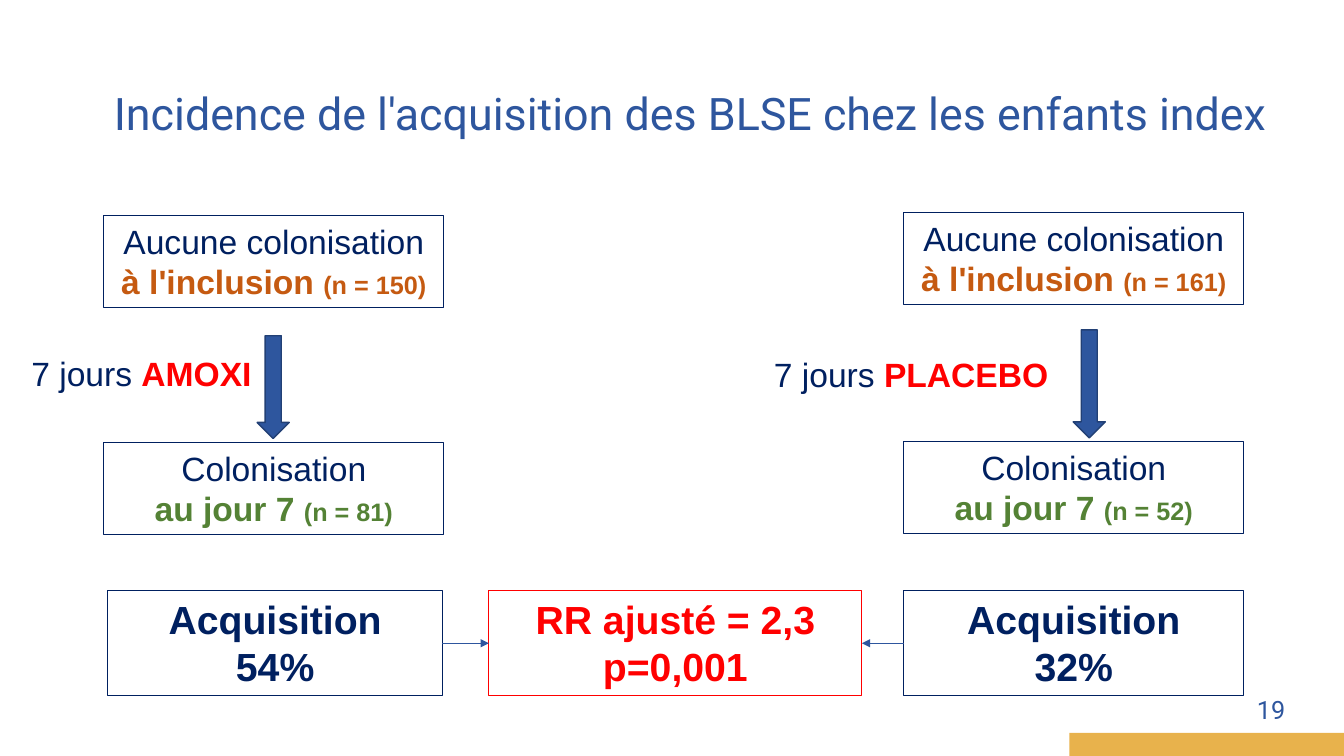
from lxml import etree
from pptx import Presentation
from pptx.dml.color import RGBColor
from pptx.enum.shapes import MSO_CONNECTOR, MSO_SHAPE
from pptx.enum.text import MSO_ANCHOR, MSO_AUTO_SIZE, PP_ALIGN
from pptx.oxml.ns import qn
from pptx.util import Cm, Pt

RECTANGLE, ARROW = MSO_SHAPE.RECTANGLE, MSO_SHAPE.RIGHT_ARROW
STRAIGHT = MSO_CONNECTOR.STRAIGHT
TOP, MIDDLE = MSO_ANCHOR.TOP, MSO_ANCHOR.MIDDLE
LEFT, CENTER, RIGHT = PP_ALIGN.LEFT, PP_ALIGN.CENTER, PP_ALIGN.RIGHT
GROW = MSO_AUTO_SIZE.SHAPE_TO_FIT_TEXT

COLORS = {
    "navy": "002060", "blue": "2E569E", "edge": "224075", "red": "FF0000",
    "orange": "C55A11", "green": "548235", "gold": "E8B24C",
}


def color(name):
    return RGBColor.from_string(COLORS[name])


def span(text, size=24, ink="navy", bold=False, font="Arial"):
    """Describe one run of text with its format."""
    return {"text": text, "size": size, "ink": ink, "bold": bold, "font": font}


class SlideBuilder:
    """Holds the current slide and draws its elements; lengths are in cm."""

    def __init__(self, slide):
        self.shapes = slide.shapes

    def fill_text(self, box, paragraphs, align=CENTER, anchor=TOP, spacing=None):
        """Fill a box with paragraphs, each a list of lines made of spans."""
        frame = box.text_frame
        frame.word_wrap = True
        frame.auto_size = GROW
        frame.vertical_anchor = anchor
        for index, lines in enumerate(paragraphs):
            para = frame.add_paragraph() if index else frame.paragraphs[0]
            para.alignment = align
            para.line_spacing = spacing
            for number, spans in enumerate(lines):
                if number:
                    para.add_line_break()
                for style in spans:
                    run = para.add_run()
                    run.text = style["text"]
                    run.font.name = style["font"]
                    run.font.size = Pt(style["size"])
                    run.font.bold = style["bold"]
                    run.font.color.rgb = color(style["ink"])

    def text(self, left, top, width, height, spans, **layout):
        box = self.shapes.add_textbox(Cm(left), Cm(top), Cm(width), Cm(height))
        self.fill_text(box, [[spans]], **layout)

    def shape(self, kind, left, top, width, height, fill=None, line=None, weight=0.75):
        shape = self.shapes.add_shape(kind, Cm(left), Cm(top), Cm(width), Cm(height))
        shape.shadow.inherit = False
        if fill:
            shape.fill.solid()
            shape.fill.fore_color.rgb = color(fill)
        else:
            shape.fill.background()
        if line:
            shape.line.color.rgb = color(line)
            shape.line.width = Pt(weight)
        else:
            shape.line.fill.background()
        return shape

    def stage(self, left, top, heading, moment, count, ink):
        """Draw a two-line box for the children counted at one moment."""
        box = self.shape(RECTANGLE, left, top, 8.56, 2.31, line="navy")
        counted = [span(moment, ink=ink, bold=True),
                   span(f"(n = {count})", size=18, ink=ink, bold=True)]
        self.fill_text(box, [[[span(heading)], counted]])

    def result(self, left, width, lines, ink="navy"):
        box = self.shape(RECTANGLE, left, 14.88, width, 2.64, line=ink)
        self.fill_text(box, [[[span(line, size=28, ink=ink, bold=True)]] for line in lines])

    def down_arrow(self, left, top, length):
        arrow = self.shape(ARROW, left, top, length, 0.81,
                           fill="blue", line="edge", weight=1)
        arrow.rotation = 90

    def link(self, start, end, y):
        """Draw a thin horizontal arrow."""
        link = self.shapes.add_connector(STRAIGHT, Cm(start), Cm(y), Cm(end), Cm(y))
        link.line.color.rgb = color("blue")
        link.line.width = Pt(0.5)
        properties = link.element.spPr
        etree.SubElement(properties.find(qn("a:ln")), qn("a:tailEnd"), type="triangle")
        etree.SubElement(properties, qn("a:effectLst"))


ARMS = [
    {"left": 2.62, "tops": (5.44, 11.15), "counts": (150, 81),
     "arrow": (5.59, 9.35, 2.59), "label": (-0.13, 8.76, 7.39, 1.27),
     "drug": "AMOXI", "result": (2.72, 8.43), "rate": "54%"},
    {"left": 22.78, "tops": (5.36, 11.13), "counts": (161, 52),
     "arrow": (26.09, 9.27, 2.72), "label": (18.54, 8.79, 8.84, 1.27),
     "drug": "PLACEBO", "result": (22.78, 8.56), "rate": "32%"},
]
STAGES = [("Aucune colonisation", "à l'inclusion ", "orange"),
          ("Colonisation", "au jour 7 ", "green")]


def main():
    deck = Presentation()
    deck.slide_width, deck.slide_height = Cm(33.87), Cm(19.05)
    page = SlideBuilder(deck.slides.add_slide(deck.slide_layouts[6]))

    page.text(30.53, 17.42, 2.11, 1.02, [span("19", size=18, ink="blue", font="Roboto")],
              align=RIGHT, anchor=MIDDLE, spacing=0.9)
    page.shape(RECTANGLE, 26.95, 18.47, 6.92, 0.58, fill="gold")
    title = "Incidence de l'acquisition des BLSE chez les enfants index"
    page.text(2.62, 2.03, 29.9, 1.63,
              [span(title, size=32, ink="blue", font="Roboto")], align=LEFT)

    for arm in ARMS:
        for top, count, (heading, moment, ink) in zip(arm["tops"], arm["counts"], STAGES):
            page.stage(arm["left"], top, heading, moment, count, ink)
        page.down_arrow(*arm["arrow"])
        page.text(*arm["label"], [span("7 jours "), span(arm["drug"], ink="red", bold=True)])
        page.result(*arm["result"], ["Acquisition", arm["rate"]])

    page.result(12.32, 9.4, ["RR ajusté = 2,3", "p=0,001"], ink="red")
    page.link(11.15, 12.32, 16.21)
    page.link(22.78, 21.72, 16.21)
    deck.save("out.pptx")


if __name__ == "__main__":
    main()
